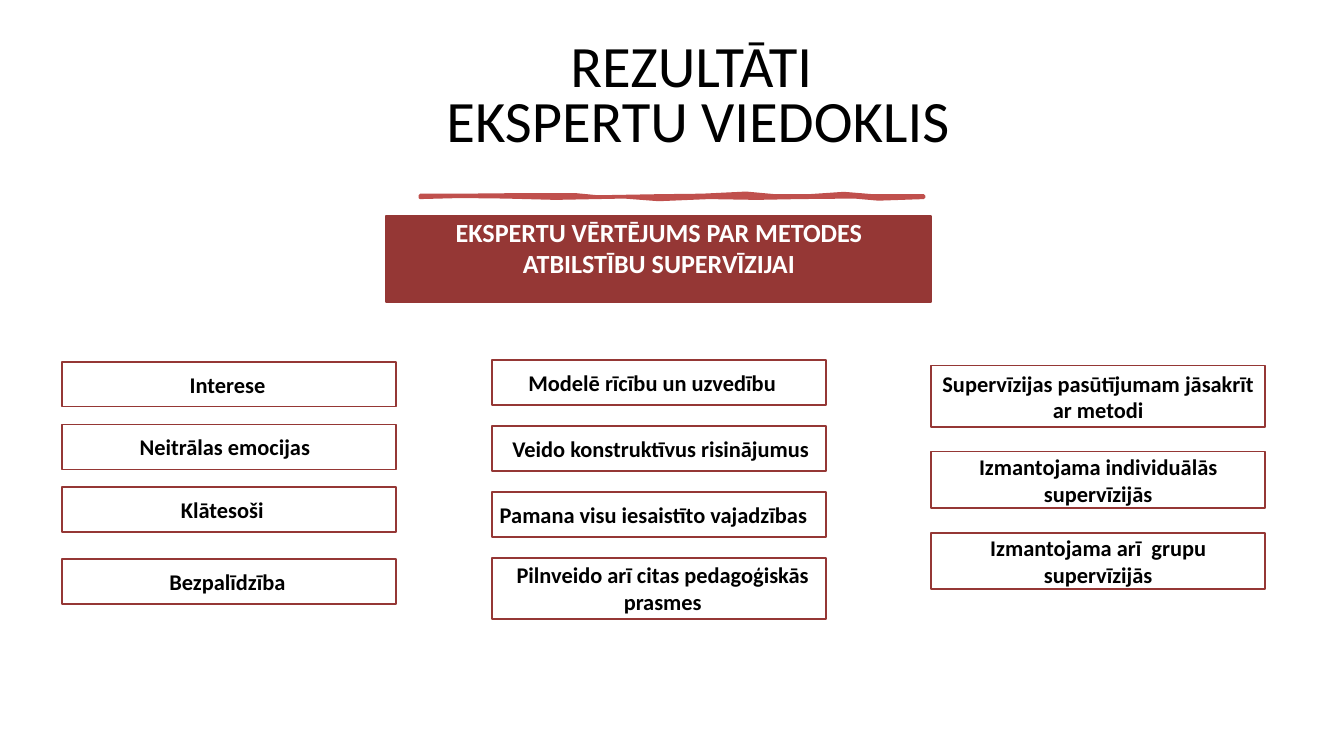
from pptx import Presentation
from pptx.dml.color import RGBColor
from pptx.enum.shapes import MSO_SHAPE as SHAPE
from pptx.enum.text import MSO_ANCHOR as ANCHOR, MSO_AUTO_SIZE as AUTO_SIZE, PP_ALIGN as ALIGN
from pptx.util import Cm, Pt

FONT = "Calibri"
BLACK, WHITE = "000000", "FFFFFF"
DARK_RED, RED = "953735", "C0504D"

COLUMN_LEFTS = (2.34, 18.59, 35.2)
BOX_WIDTH = 12.62
# Each box: text, top, height, sideways shift of the text (cm)
COLUMNS = (
    (
        ("Interese", 13.67, 1.7, -0.1),
        ("Neitrālas emocijas", 16.05, 1.7, -0.3),
        ("Klātesoši", 18.42, 1.7, -0.5),
        ("Bezpalīdzība", 21.13, 1.7, -0.1),
    ),
    (
        ("Modelē rīcību un uzvedību", 13.61, 1.7, -0.5),
        ("Veido konstruktīvus risinājumus", 16.1, 1.7, 0.15),
        ("Pamana visu iesaistīto vajadzības", 18.59, 1.7, -0.4),
        ("Pilnveido arī citas pedagoģiskās prasmes", 21.1, 2.29, 0.3),
    ),
    (
        ("Supervīzijas pasūtījumam jāsakrīt ar metodi", 13.82, 2.34, 0),
        ("Izmantojama individuālās supervīzijās", 17.07, 2.13, 0),
        ("Izmantojama arī  grupu supervīzijās", 20.14, 2.13, 0),
    ),
)

# Outline of the brush stroke: x and y (cm)
STROKE_TOP = (
    (15.88, 7.38), (17.4, 7.38), (19.5, 7.36), (21.77, 7.36), (22.6, 7.44),
    (24.84, 7.4), (26.54, 7.38), (28.2, 7.3), (29.3, 7.4), (30.56, 7.4),
    (31.9, 7.31), (33, 7.4), (34.92, 7.4),
)
STROKE_BOTTOM = (
    (34.92, 7.47), (33.2, 7.53), (32.3, 7.45), (30.2, 7.47), (28.6, 7.5),
    (26.8, 7.47), (24.9, 7.55), (23.6, 7.45), (21, 7.5), (19.1, 7.45),
    (17.4, 7.43), (15.88, 7.47),
)


def rgb(value):
    return RGBColor.from_string(value)


def write(tf, *lines, size, color=BLACK, bold=False, anchor=ANCHOR.MIDDLE,
          line_spacing=None, space_after=None):
    """Fill a text frame with one centred paragraph per line."""
    tf.word_wrap = True
    tf.auto_size = AUTO_SIZE.NONE
    tf.vertical_anchor = anchor
    for i, line in enumerate(lines):
        p = tf.add_paragraph() if i else tf.paragraphs[0]
        p.alignment = ALIGN.CENTER
        p.line_spacing = line_spacing
        p.space_after = space_after
        r = p.add_run()
        r.text = line
        r.font.name, r.font.size, r.font.bold = FONT, Pt(size), bold
        r.font.color.rgb = rgb(color)


class SlideBuilder:
    def __init__(self, s):
        self.s = s

    def paint(self, sp, fill, line, width):
        sp.shadow.inherit = False
        sp.fill.solid()
        sp.fill.fore_color.rgb = rgb(fill)
        sp.line.color.rgb = rgb(line)
        sp.line.width = Pt(width)

    def title(self, *lines, left, top, width, height):
        sp = self.s.shapes.title
        sp.left, sp.top, sp.width, sp.height = map(Cm, (left, top, width, height))
        write(sp.text_frame, *lines, size=62.8, line_spacing=0.7, space_after=Pt(6))

    def box(self, text, left, top, width, height, fill=WHITE, shift=0, **style):
        sp = self.s.shapes.add_shape(SHAPE.RECTANGLE, Cm(left), Cm(top), Cm(width), Cm(height))
        self.paint(sp, fill, DARK_RED, 2)
        tf = sp.text_frame
        tf.margin_left = Cm(0.25 + max(shift, 0))
        tf.margin_right = Cm(0.25 + max(-shift, 0))
        tf.margin_top = tf.margin_bottom = 0
        write(tf, text, bold=True, **style)

    def brush_stroke(self, points):
        (x, y), *rest = [(Cm(px), Cm(py)) for px, py in points]
        builder = self.s.shapes.build_freeform(x, y)
        builder.add_line_segments(rest, close=True)
        self.paint(builder.convert_to_shape(), RED, RED, 3.25)


def main():
    prs = Presentation()
    prs.slide_width, prs.slide_height = Cm(50.8), Cm(28.58)
    slide = SlideBuilder(prs.slides.add_slide(prs.slide_layouts[5]))

    slide.brush_stroke(STROKE_TOP + STROKE_BOTTOM)
    slide.title("REZULTĀTI ", "EKSPERTU VIEDOKLIS", left=3.38, top=1.55, width=46, height=4.45)
    slide.box("EKSPERTU VĒRTĒJUMS PAR METODES ATBILSTĪBU SUPERVĪZIJAI",
              14.6, 8.18, 20.6, 3.23, fill=DARK_RED, size=28, color=WHITE, anchor=ANCHOR.TOP)
    for left, boxes in zip(COLUMN_LEFTS, COLUMNS):
        for text, top, height, shift in boxes:
            slide.box(text, left, top, BOX_WIDTH, height, shift=shift, size=24)

    prs.save("out.pptx")


if __name__ == "__main__":
    main()
